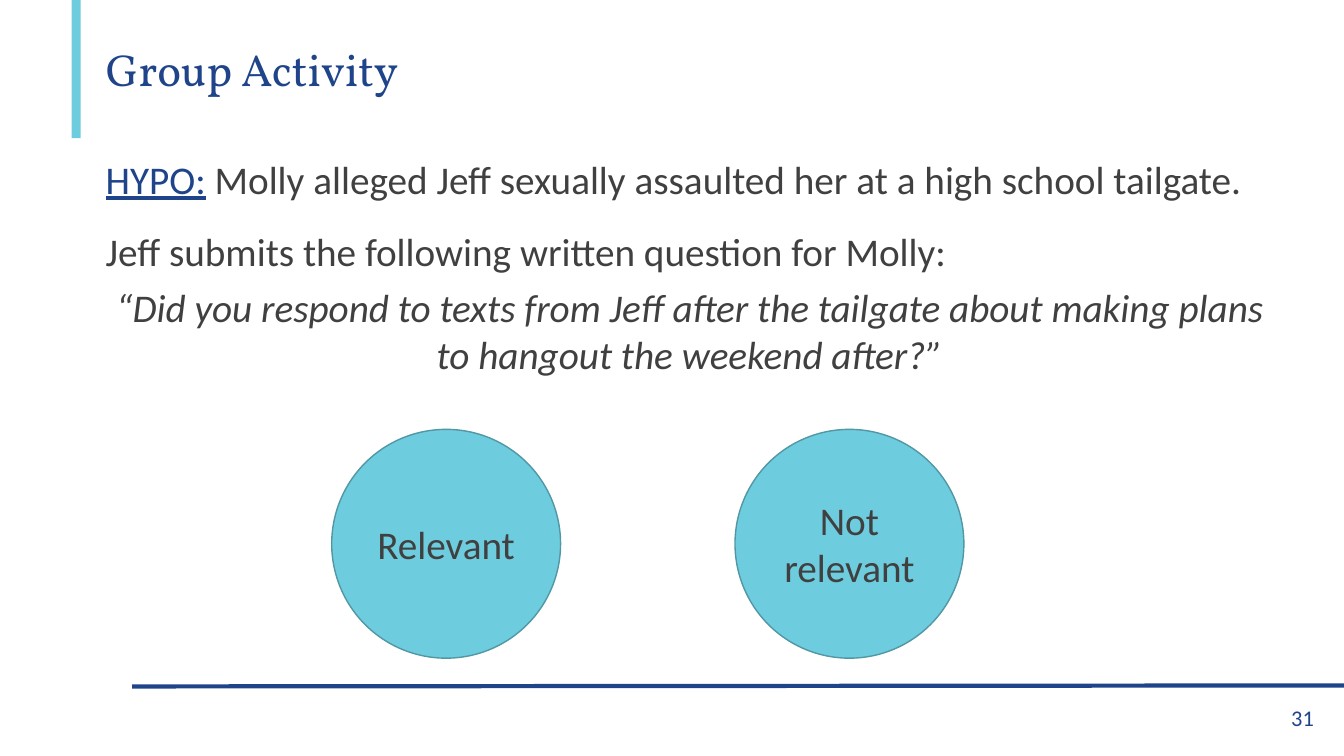
from lxml import etree
from pptx import Presentation
from pptx.dml.color import RGBColor
from pptx.enum.shapes import MSO_CONNECTOR, MSO_SHAPE
from pptx.enum.text import MSO_ANCHOR, PP_ALIGN
from pptx.oxml.ns import qn
from pptx.util import Inches, Pt

STRAIGHT = MSO_CONNECTOR.STRAIGHT
RECTANGLE, OVAL = MSO_SHAPE.RECTANGLE, MSO_SHAPE.OVAL
MIDDLE = MSO_ANCHOR.MIDDLE
LEFT, CENTER, RIGHT = PP_ALIGN.LEFT, PP_ALIGN.CENTER, PP_ALIGN.RIGHT

WIDTH, HEIGHT = 13.33, 7.5
MARGIN, HEADER = 0.95, 1.37
NAVY, AQUA, TEAL, GREY = "1F448A", "6DCCDE", "5197A4", "404040"
TITLE_FONT, BODY_FONT = "Vollkorn", "Calibri"


def color(hex_string):
    return RGBColor.from_string(hex_string)


def style(span, size, hex_string, name=BODY_FONT):
    span.font.size, span.font.name = Pt(size), name
    span.font.color.rgb = color(hex_string)


def add_filled(page, kind, box, fill, line=None):
    shape = page.shapes.add_shape(kind, *map(Inches, box))
    shape.shadow.inherit = False
    shape.fill.solid()
    shape.fill.fore_color.rgb = color(fill)
    if line:
        shape.line.color.rgb = color(line)
        shape.line.width = Pt(1)
    else:
        shape.line.fill.background()
    return shape


def add_text_box(page, box):
    frame = page.shapes.add_textbox(*map(Inches, box)).text_frame
    frame.word_wrap = True
    return frame


def add_header(page, box, text):
    left, top, width, height = box
    add_filled(page, RECTANGLE, (left - 0.24, top, 0.09, height), AQUA)
    title = page.shapes.title
    title.left, title.top, title.width, title.height = map(Inches, box)
    frame = title.text_frame
    frame.text = text
    frame.vertical_anchor = MIDDLE
    frame.margin_left = frame.margin_top = frame.margin_right = Inches(0.1)
    frame.margin_bottom = Inches(0.05)
    para = frame.paragraphs[0]
    para.alignment, para.line_spacing = LEFT, 0.9
    style(para.runs[0], 32, NAVY, TITLE_FONT)


def add_hypothetical(page, box, label, allegation, lead_in, question):
    frame = add_text_box(page, box)
    first = frame.paragraphs[0]
    rows = [(first, (label, allegation), LEFT, 18),
            (frame.add_paragraph(), (lead_in,), LEFT, 6),
            (frame.add_paragraph(), (question,), CENTER, 6)]
    for para, texts, alignment, space_after in rows:
        para.alignment, para.space_after = alignment, Pt(space_after)
        for text in texts:
            span = para.add_run()
            span.text = text
            style(span, 28, GREY)
    first.runs[0].font.underline = True
    first.runs[0].font.color.rgb = color(NAVY)
    para.runs[0].font.italic = True


def add_choices(page, box, labels):
    """Spread one circle per label evenly across the box."""
    left, top, width, diameter = box
    step = (width - diameter) / (len(labels) - 1)
    for index, label in enumerate(labels):
        place = (left + index * step, top, diameter, diameter)
        frame = add_filled(page, OVAL, place, AQUA, TEAL).text_frame
        frame.word_wrap = True
        frame.vertical_anchor = MIDDLE
        frame.text = label
        para = frame.paragraphs[0]
        para.alignment = CENTER
        style(para.runs[0], 28, GREY)


def add_footer(page, box, number):
    left, top, width, height = box
    rule = page.shapes.add_connector(
        STRAIGHT, *map(Inches, (left, top + 0.01, left + width, top)))
    rule.line.color.rgb = color(NAVY)
    rule.line.width = Pt(3)
    etree.SubElement(rule._element.spPr, qn("a:effectLst"))
    frame = add_text_box(page, (left + width - 0.76, top + 0.14, 0.56, 0.4))
    frame.text = number
    para = frame.paragraphs[0]
    para.alignment = RIGHT
    style(para.runs[0], 16, NAVY)


def main():
    deck = Presentation()
    deck.slide_width, deck.slide_height = Inches(WIDTH), Inches(HEIGHT)
    page = deck.slides.add_slide(deck.slide_layouts[5])
    add_footer(page, (1.31, 6.8, WIDTH - 1.31, 0.7), "31")
    add_header(page, (MARGIN, 0, 11.47, HEADER), "Group Activity")
    add_hypothetical(
        page, (MARGIN, 1.49, 11.78, 2.78), "HYPO:",
        " Molly alleged Jeff sexually assaulted her at a high school tailgate.",
        "Jeff submits the following written question for Molly:",
        "“Did you respond to texts from Jeff after the tailgate about making "
        "plans to hangout the weekend after?”")
    add_choices(page, (3.29, 4.26, 6.27, 2.27), ["Relevant", "Not relevant"])
    deck.save("out.pptx")


if __name__ == "__main__":
    main()
